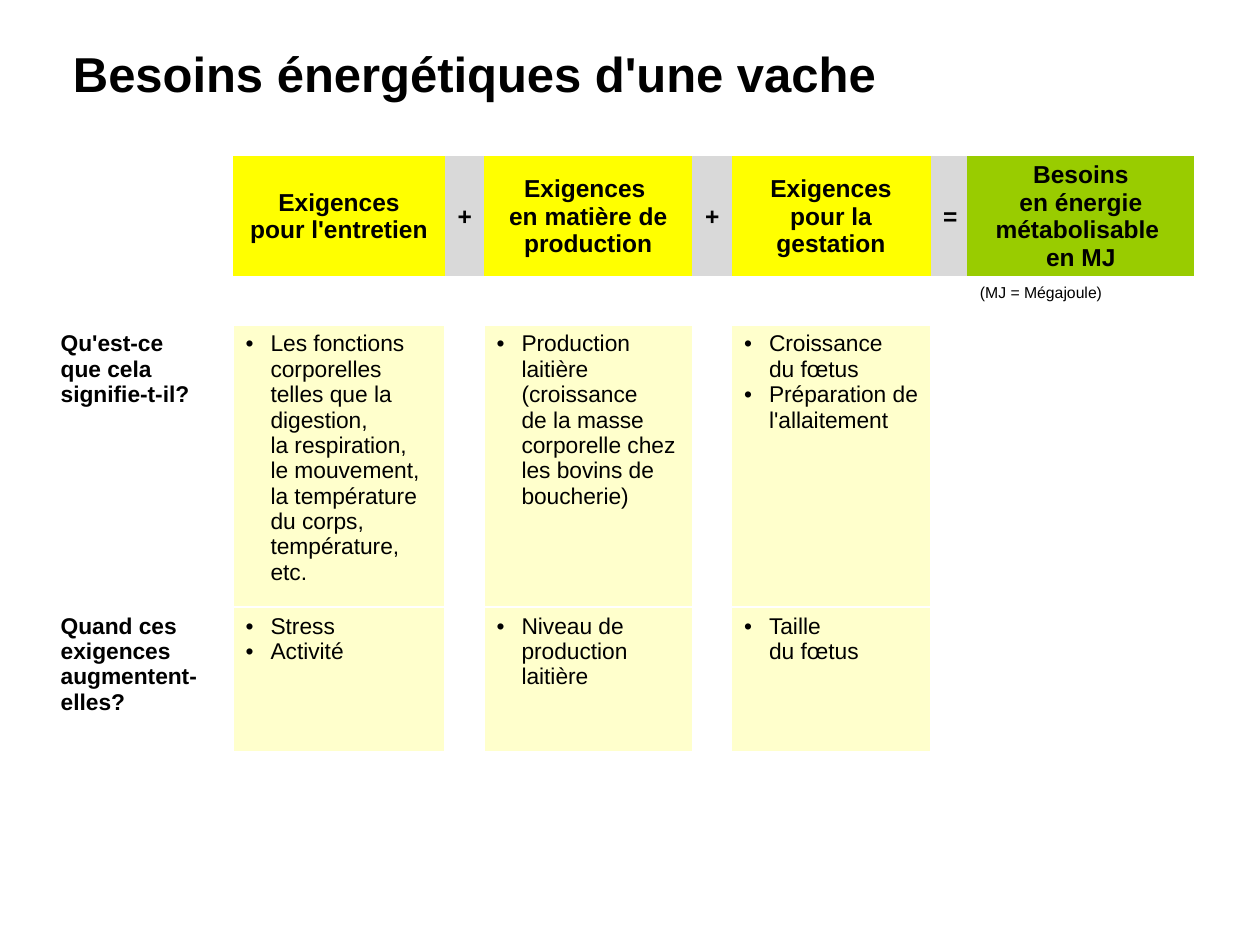
"""Build the slide on the energy needs of a cow."""
import copy
from dataclasses import dataclass

import pptx
import pptx.dml.color
import pptx.enum.text
import pptx.oxml
import pptx.oxml.ns
import pptx.util

Cm, Pt = pptx.util.Cm, pptx.util.Pt
ALIGN = pptx.enum.text.PP_ALIGN
ANCHOR = pptx.enum.text.MSO_ANCHOR
NS = pptx.oxml.ns.nsdecls("a")
PLAIN = "{2D5ABB26-0587-4C30-8999-92F81FD0307C}"
BLACK, WHITE, YELLOW, GREY = "000000", "FFFFFF", "FFFF00", "D9D9D9"
GREEN, CREAM = "99CC00", "FFFFCC"
COLS = (3.73, 4.27, 0.79, 4.2, 0.79, 4.01, 0.74, 4.58)
ROWS = (2.49, 0.94, 5.69, 2.92)


@dataclass
class Style:
    size: float
    bold: bool = False
    align: ALIGN = ALIGN.LEFT
    anchor: ANCHOR = ANCHOR.TOP
    bullet: bool = False


@dataclass
class Item:
    row: int
    col: int
    style: Style
    lines: tuple
    fill: str = ""


HEAD = Style(14, True, ALIGN.CENTER, ANCHOR.MIDDLE)
SIDE, LIST, NOTE = Style(13, True), Style(13, bullet=True), Style(9)

ITEMS = (
    Item(0, 1, HEAD, ("Exigences\npour l'entretien",), YELLOW),
    Item(0, 2, HEAD, ("+",), GREY),
    Item(0, 3, HEAD, ("Exigences \nen matière de production",), YELLOW),
    Item(0, 4, HEAD, ("+",), GREY),
    Item(0, 5, HEAD, ("Exigences\npour la gestation",), YELLOW),
    Item(0, 6, HEAD, ("=",), GREY),
    Item(0, 7, HEAD, ("Besoins\nen énergie métabolisable \nen MJ",), GREEN),
    Item(1, 7, NOTE, ("(MJ = Mégajoule)",)),
    Item(2, 0, SIDE, ("Qu'est-ce \nque cela signifie-t-il?",)),
    Item(2, 1, LIST, ("Les fonctions corporelles telles que la digestion, \n"
                      "la respiration, \nle mouvement, la température du corps, \n"
                      "température, etc.",), CREAM),
    Item(2, 3, LIST, ("Production laitière \n(croissance \n"
                      "de la masse corporelle chez les bovins de boucherie)",), CREAM),
    Item(2, 5, LIST, ("Croissance \ndu fœtus", "Préparation de l'allaitement"), CREAM),
    Item(3, 0, SIDE, ("Quand ces exigences augmentent-elles?",)),
    Item(3, 1, LIST, ("Stress", "Activité"), CREAM),
    Item(3, 3, LIST, ("Niveau de production laitière",), CREAM),
    Item(3, 5, LIST, ("Taille \ndu fœtus",), CREAM),
)


def tint(code: str) -> pptx.dml.color.RGBColor:
    """Turn a hex string into a colour."""
    return pptx.dml.color.RGBColor.from_string(code)


def apply(thing, form: dict) -> None:
    """Set each attribute named in the dict."""
    for name, value in form.items():
        setattr(thing, name, value)


def write(par, text: str, style: Style) -> None:
    """Fill a paragraph with styled text."""
    par.text = text
    par.alignment = style.align
    if style.bullet:
        props = par._p.get_or_add_pPr()
        props.set("marL", str(Cm(0.5)))
        props.set("indent", str(-Cm(0.5)))
        props.append(pptx.oxml.parse_xml(f'<a:buFont {NS} typeface="Arial"/>'))
        props.append(pptx.oxml.parse_xml(f'<a:buChar {NS} char="•"/>'))
    for run in par.runs:
        apply(run.font, {"name": "Arial", "size": Pt(style.size), "bold": style.bold})
        run.font.color.rgb = tint(BLACK)
    for brk in par._p.findall(pptx.oxml.ns.qn("a:br")):
        brk.append(copy.deepcopy(par.runs[0]._r.rPr))


def edge(cell, sides: dict) -> None:
    """Draw white cell borders of the given point widths."""
    props = cell._tc.get_or_add_tcPr()
    for side, width in sides.items():
        props.append(pptx.oxml.parse_xml(
            f'<a:ln{side} {NS} w="{Pt(width)}"><a:solidFill>'
            f'<a:srgbClr val="{WHITE}"/></a:solidFill></a:ln{side}>'))


def fill(cell, item: Item) -> None:
    """Put one item in its cell."""
    cell.vertical_anchor = item.style.anchor
    frame = cell.text_frame
    for num, line in enumerate(item.lines):
        write(frame.add_paragraph() if num else frame.paragraphs[0], line, item.style)
    if item.fill:
        cell.fill.solid()
        cell.fill.fore_color.rgb = tint(item.fill)


def grid(slide) -> None:
    """Add the table of needs."""
    frame = slide.shapes.add_table(len(ROWS), len(COLS), Cm(0.97), Cm(3.12),
                                   Cm(sum(COLS)), Cm(sum(ROWS)))
    table = frame.table
    apply(table, {"first_row": False, "horz_banding": False})
    table._tbl.tblPr.find(pptx.oxml.ns.qn("a:tableStyleId")).text = PLAIN
    for col, width in zip(table.columns, COLS):
        col.width = Cm(width)
    for row, height in zip(table.rows, ROWS):
        row.height = Cm(height)
    items = {(item.row, item.col): item for item in ITEMS}
    for row in range(len(ROWS)):
        for col in range(len(COLS)):
            cell = table.cell(row, col)
            edge(cell, {"T": 1, "B": 3} if row == 0 else dict.fromkeys("LRTB", 1))
            cell.fill.background()
            if (row, col) in items:
                fill(cell, items[row, col])
            else:
                last = cell.text_frame.paragraphs[0]._p.get_or_add_endParaRPr()
                last.set("sz", "900")


def head(slide) -> None:
    """Place and write the title."""
    title = slide.shapes.title
    apply(title, {"left": Cm(1.47), "top": Cm(0.56),
                  "width": Cm(22.91), "height": Cm(1.93)})
    apply(title.text_frame, {"margin_left": 0, "margin_top": 0,
                             "margin_right": Cm(0.25), "margin_bottom": Cm(0.13),
                             "word_wrap": True, "vertical_anchor": ANCHOR.MIDDLE,
                             "auto_size": pptx.enum.text.MSO_AUTO_SIZE.NONE})
    write(title.text_frame.paragraphs[0], "Besoins énergétiques d'une vache",
          Style(28, True))


def main() -> None:
    """Build and save the deck."""
    deck = pptx.Presentation()
    apply(deck, {"slide_width": Cm(25.4), "slide_height": Cm(19.05)})
    slide = deck.slides.add_slide(deck.slide_layouts[5])
    head(slide)
    grid(slide)
    deck.save("out.pptx")


if __name__ == "__main__":
    main()
